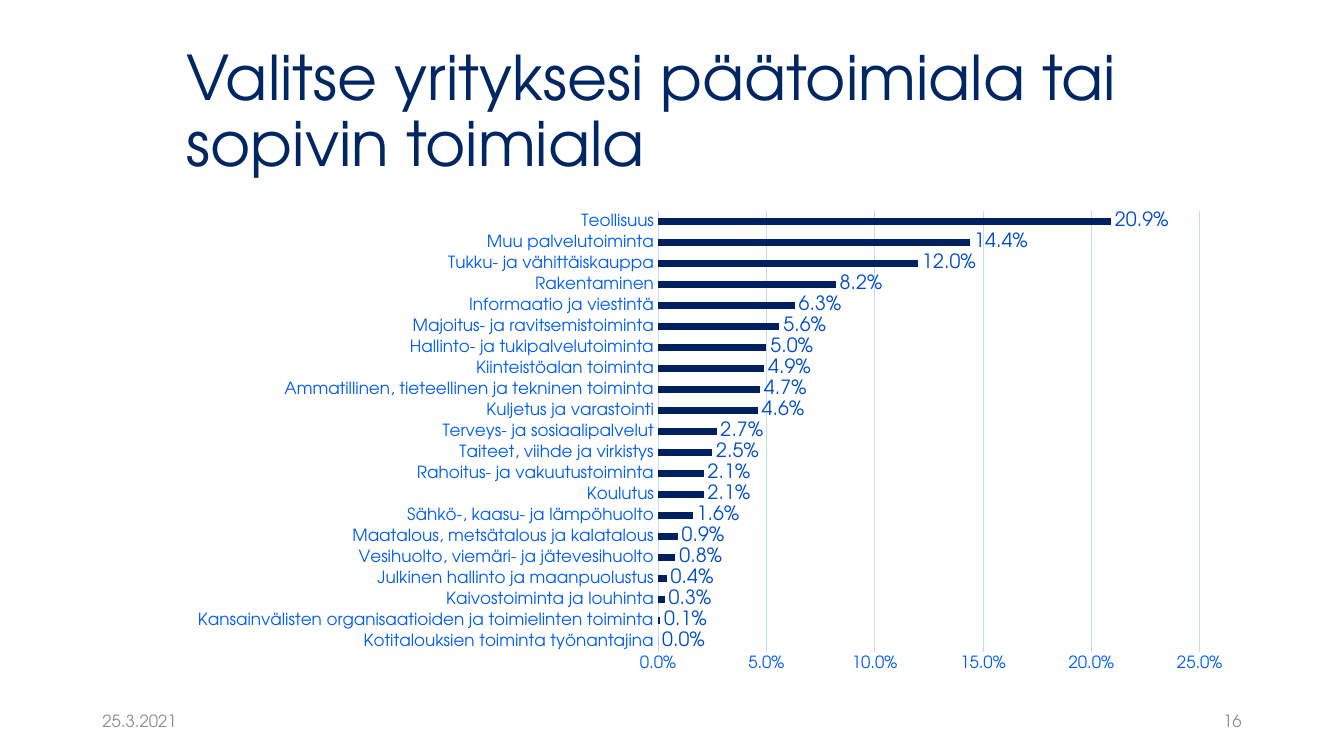
from pptx import Presentation
from pptx.chart.data import CategoryChartData
from pptx.dml.color import RGBColor
from pptx.enum.chart import XL_CHART_TYPE as ChartType
from pptx.enum.chart import XL_LABEL_POSITION as LabelPos
from pptx.enum.chart import XL_TICK_MARK as TickMark
from pptx.enum.text import MSO_ANCHOR as Anchor
from pptx.enum.text import PP_ALIGN as Align
from pptx.util import Cm, Pt

NAVY = RGBColor(0x00, 0x26, 0x63)
BAR_NAVY = RGBColor(0x00, 0x20, 0x60)
AXIS_BLUE = RGBColor(0x00, 0x5D, 0xF3)
LABEL_BLUE = RGBColor(0x00, 0x4D, 0xCA)
PALE_BLUE = RGBColor(0xC1, 0xD9, 0xFF)
GREY = RGBColor(0x8C, 0x8E, 0x9F)

# Share of respondents in percent, largest first
INDUSTRIES = [
    ("Teollisuus", 20.9),
    ("Muu palvelutoiminta", 14.4),
    ("Tukku- ja vähittäiskauppa", 12.0),
    ("Rakentaminen", 8.2),
    ("Informaatio ja viestintä", 6.3),
    ("Majoitus- ja ravitsemistoiminta", 5.6),
    ("Hallinto- ja tukipalvelutoiminta", 5.0),
    ("Kiinteistöalan toiminta", 4.9),
    ("Ammatillinen, tieteellinen ja tekninen toiminta", 4.7),
    ("Kuljetus ja varastointi", 4.6),
    ("Terveys- ja sosiaalipalvelut", 2.7),
    ("Taiteet, viihde ja virkistys", 2.5),
    ("Rahoitus- ja vakuutustoiminta", 2.1),
    ("Koulutus", 2.1),
    ("Sähkö-, kaasu- ja lämpöhuolto", 1.6),
    ("Maatalous, metsätalous ja kalatalous", 0.9),
    ("Vesihuolto, viemäri- ja jätevesihuolto", 0.8),
    ("Julkinen hallinto ja maanpuolustus", 0.4),
    ("Kaivostoiminta ja louhinta", 0.3),
    ("Kansainvälisten organisaatioiden ja toimielinten toiminta", 0.1),
    ("Kotitalouksien toiminta työnantajina", 0.0),
]


class SurveySlide:
    font_name = "TeX Gyre Adventor"
    number_format = "0.0%"

    def __init__(self, slide):
        self.slide = slide

    def style_font(self, font, size, color):
        for name, value in {"name": self.font_name, "size": Pt(size)}.items():
            setattr(font, name, value)
        font.color.rgb = color

    def style_line(self, line):
        line.color.rgb = PALE_BLUE
        line.width = Pt(0.75)

    def text(self, text, box, size, color, **paragraph_format):
        tf = self.slide.shapes.add_textbox(*map(Cm, box)).text_frame
        tf.word_wrap = True
        tf.vertical_anchor = Anchor.MIDDLE
        p = tf.paragraphs[0]
        for name, value in paragraph_format.items():
            setattr(p, name, value)
        r = p.add_run()
        r.text = text
        self.style_font(r.font, size, color)

    def bar_chart(self, rows, box):
        """Draw horizontal bars with the first row at the top."""
        data = CategoryChartData(number_format=self.number_format)
        names, shares = zip(*reversed(rows))
        data.categories = names
        data.add_series("Series 1", [round(share / 100, 3) for share in shares])
        chart = self.slide.shapes.add_chart(
            ChartType.BAR_CLUSTERED, *map(Cm, box), data).chart
        self.style_font(chart.font, 10, NAVY)
        chart.has_legend = False
        chart.has_title = False

        for axis in (chart.category_axis, chart.value_axis):
            axis.major_tick_mark = axis.minor_tick_mark = TickMark.NONE
            self.style_font(axis.tick_labels.font, 12, AXIS_BLUE)
        self.style_line(chart.category_axis.format.line)
        values = chart.value_axis
        values.format.line.fill.background()
        values.has_major_gridlines = True
        self.style_line(values.major_gridlines.format.line)

        plot = chart.plots[0]
        plot.gap_width = 182
        plot.vary_by_categories = False
        fill = plot.series[0].format.fill
        fill.solid()
        fill.fore_color.rgb = BAR_NAVY
        plot.has_data_labels = True
        labels = plot.data_labels
        label_format = {"show_value": True, "position": LabelPos.OUTSIDE_END}
        for name, value in label_format.items():
            setattr(labels, name, value)
        self.style_font(labels.font, 14, LABEL_BLUE)
        for target in (values.tick_labels, labels):
            target.number_format = self.number_format
            target.number_format_is_linked = False


def main():
    prs = Presentation()
    prs.slide_width, prs.slide_height = Cm(33.87), Cm(19.05)
    s = SurveySlide(prs.slides.add_slide(prs.slide_layouts[6]))
    s.text("Valitse yrityksesi päätoimiala tai sopivin toimiala",
           (4.45, 1.02, 26.9, 3.68), 44, NAVY, line_spacing=0.9)
    s.bar_chart(INDUSTRIES, (4.45, 5.08, 26.9, 12.09))
    s.text("25.3.2021", (2.33, 17.65, 7.62, 1.02), 12, GREY)
    s.text("16", (23.92, 17.65, 7.62, 1.02), 12, GREY, alignment=Align.RIGHT)
    prs.save("out.pptx")


if __name__ == "__main__":
    main()
